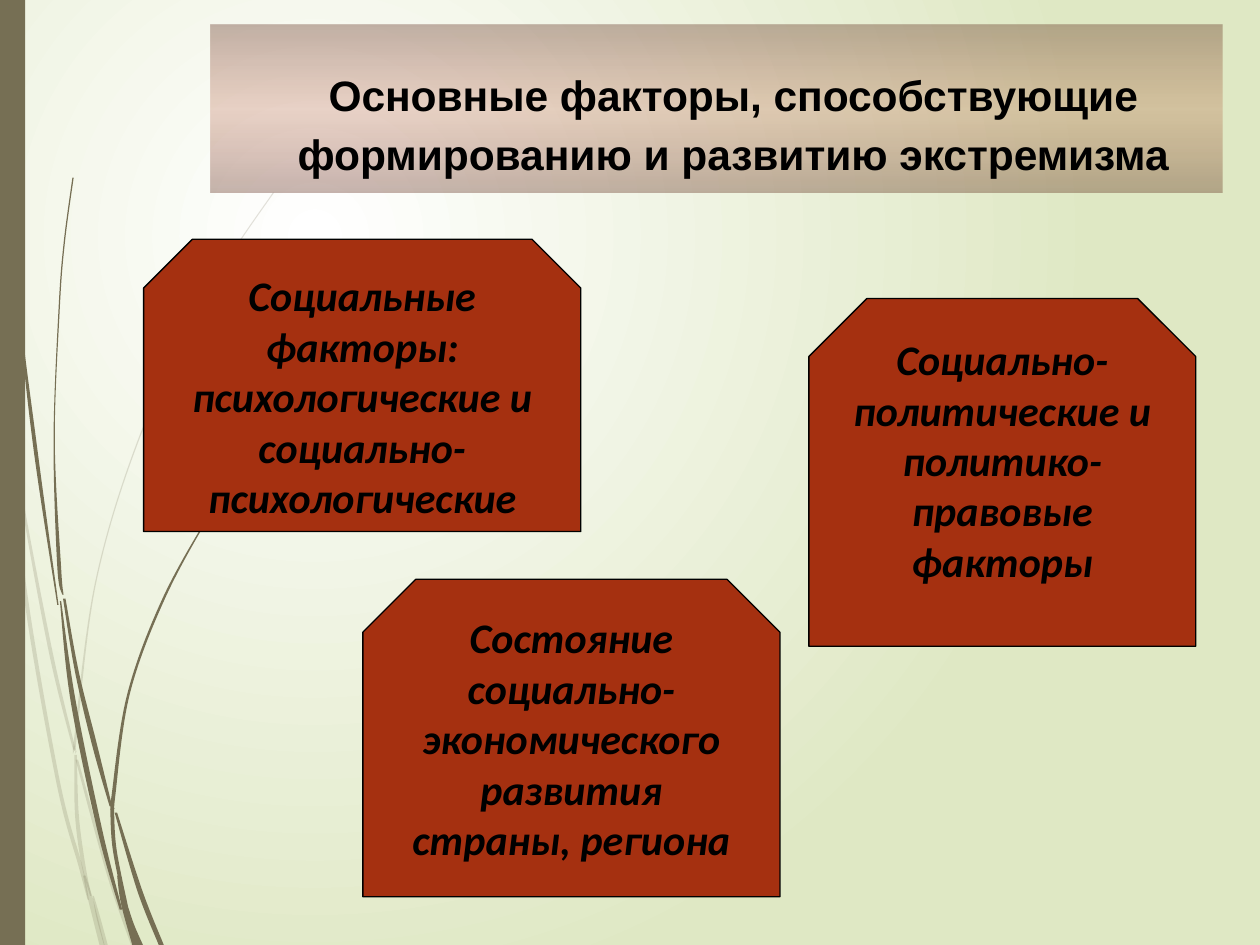
"""Build a slide on the factors behind extremism: a title banner and three factor boxes."""
from dataclasses import dataclass

from lxml.etree import SubElement, fromstring
from pptx import Presentation
from pptx.dml.color import RGBColor
from pptx.enum.shapes import MSO_SHAPE as Shape
from pptx.enum.text import MSO_ANCHOR as Anchor, PP_ALIGN as Align
from pptx.oxml.ns import nsdecls, qn
from pptx.util import Inches, Pt


@dataclass(frozen=True)
class Theme:
    stem: str = "766F54"
    box: str = "A53010"
    box_dark: str = "4F1707"
    ink: str = "000000"
    light: str = "FFFFFF"
    meadow: str = "DFE8C4"
    title_font: str = "Arial"
    body_font: str = "Calibri"
    title_size: float = 24.3
    body_size: float = 24
    outline: float = 0.75
    pale: int = 20
    veil: int = 32


THEME = Theme()
WIDTH, HEIGHT = 10, 7.5

TITLE = "Основные факторы, способствующие формированию и развитию экстремизма"

# Places are left, top, width and height in percent of the slide.
SIDEBAR_PLACE = (0, 0, 2, 100)
BANNER_PLACE = (16.7, 2.6, 80.3, 17.8)
TITLE_PLACE = (20.9, 4.93, 72.1, 15.6)
FACTORS = [
    ("Состояние социально-экономического развития страны, региона", (28.8, 61.3, 33.1, 33.6)),
    ("Социально-политические и политико-правовые факторы", (64.2, 31.6, 30.7, 36.8)),
    ("Социальные факторы:\nпсихологические и социально-психологические", (11.4, 25.33, 34.7, 30.93)),
]

# Each stem is a list of x, y and thickness.
PALE_STEMS = [
    [(0, 2.9, 0.02), (0.04, 3.16, 0.02), (0.08, 3.5, 0.01)],
    [(0.11, 3.5, 0.01), (0.2, 4.11, 0.02), (0.41, 5.21, 0.03), (0.59, 5.95, 0.02)],
    [(0.61, 6.03, 0.02), (0.86, 6.93, 0.03), (1.06, 7.5, 0.04)],
    [(0.09, 3.5, 0.01), (0.2, 4.7, 0.03), (0.46, 6.2, 0.03), (0.64, 6.88, 0.03), (0.7, 7.14, 0.01)],
    [(0.67, 6.95, 0.02), (0.72, 7.14, 0.04), (0.81, 7.5, 0.04)],
    [(2.17, 1.53, 0.01), (1.86, 1.98, 0.01), (1.58, 2.45, 0.01), (1.1, 3.49, 0.01), (0.76, 4.62, 0.01),
     (0.6, 5.85, 0.02), (0.6, 5.96, 0.02)],
    [(0.6, 5.99, 0.02), (0.61, 6.46, 0.03), (0.66, 6.85, 0.03), (0.72, 7.11, 0.01)],
    [(0.74, 7.11, 0.01), (0.78, 7.28, 0.03), (0.84, 7.5, 0.03)],
]
DARK_STEMS = [
    [(0.03, 0, 0.01), (0.06, 1.1, 0.01), (0.14, 2.33, 0.01), (0.28, 3.55, 0.03), (0.46, 4.8, 0.01)],
    [(0.48, 4.77, 0.01), (0.58, 5.56, 0.04), (0.79, 6.58, 0.04), (0.96, 7.22, 0.02)],
    [(0.94, 6.95, 0.02), (0.98, 7.17, 0.04), (1.08, 7.5, 0.06)],
    [(0.58, 1.41, 0.01), (0.51, 1.93, 0.01), (0.47, 2.45, 0.01), (0.43, 3.49, 0.01), (0.47, 4.5, 0.03), (0.5, 4.72, 0.01)],
    [(0.51, 4.75, 0.02), (0.61, 5.33, 0.03), (0.75, 5.91, 0.04), (0.88, 6.4, 0.02)],
    [(0.92, 6.45, 0.02), (1.11, 7.07, 0.04), (1.28, 7.5, 0.04)],
    [(2.15, 3.44, 0.01), (1.91, 3.74, 0.01), (1.68, 4.06, 0.01), (1.3, 4.75, 0.02), (1.02, 5.51, 0.02),
     (0.9, 6.32, 0.03), (0.9, 6.42, 0.03)],
    [(0.89, 6.42, 0.03), (0.91, 6.74, 0.03), (1, 7.19, 0.03)],
    [(1.01, 7.19, 0.01), (1.05, 7.34, 0.03), (1.12, 7.5, 0.03)],
]


def frame(place):
    return [Inches(share * side / 100) for share, side in zip(place, (WIDTH, HEIGHT) * 2)]


def paint(shape, color, alpha=None):
    shape.shadow.inherit = False
    shape.line.fill.background()
    shape.fill.solid()
    shape.fill.fore_color.rgb = RGBColor.from_string(color)
    if alpha:
        node = shape.element.find(".//" + qn("a:srgbClr"))
        SubElement(node, qn("a:alpha"), val=str(alpha * 1000))


def set_gradient(element, stops, direction):
    marks = "".join(
        f'<a:gs pos="{position * 1000}"><a:srgbClr val="{color}">'
        f'<a:alpha val="{alpha * 1000}"/></a:srgbClr></a:gs>'
        for position, color, alpha in stops
    )
    solid = element.find(".//" + qn("a:solidFill"))
    gradient = fromstring(f'<a:gradFill {nsdecls("a")} rotWithShape="1"><a:gsLst>{marks}</a:gsLst>{direction}</a:gradFill>')
    solid.getparent().replace(solid, gradient)


def bend(lines):
    """Turn the straight segments along one side of a stem into curves."""
    points = [(int(node.get("x")), int(node.get("y"))) for line in lines for node in line]
    padded = [points[0], *points, points[-1]]
    for line, before, start, end, after in zip(lines[1:], padded, padded[1:], padded[2:], padded[3:]):
        controls = [
            [a + (c - b) / 6 for a, b, c in zip(start, before, end)],
            [a - (c - b) / 6 for a, b, c in zip(end, start, after)],
            end,
        ]
        nodes = "".join(f'<a:pt x="{round(x)}" y="{round(y)}"/>' for x, y in controls)
        curve = fromstring(f'<a:cubicBezTo {nsdecls("a")}>{nodes}</a:cubicBezTo>')
        line.getparent().replace(line, curve)


def add_stem(slide, points, alpha=None):
    left = [(Inches(x - thickness / 2), Inches(y)) for x, y, thickness in points]
    right = [(Inches(x + thickness / 2), Inches(y)) for x, y, thickness in reversed(points)]
    outline = left + right
    builder = slide.shapes.build_freeform(*outline[0])
    builder.add_line_segments(outline[1:], close=True)
    stem = builder.convert_to_shape()
    lines = list(stem.element.find(".//" + qn("a:pathLst"))[0])
    bend(lines[:len(left)])
    bend(lines[len(left):len(outline)])
    paint(stem, THEME.stem, alpha)


def add_panel(slide, kind, place, color):
    panel = slide.shapes.add_shape(kind, *frame(place))
    paint(panel, color)
    return panel


def write(text_frame, text, font_name, size, italic=False):
    text_frame.text = text
    text_frame.word_wrap = True
    for paragraph in text_frame.paragraphs:
        paragraph.alignment = Align.CENTER
        for run in paragraph.runs:
            font = run.font
            font.name, font.size = font_name, Pt(size)
            font.bold, font.italic = True, italic
            font.color.rgb = RGBColor.from_string(THEME.ink)


def add_title(slide, banner):
    title = slide.shapes.title
    title.left, title.top, title.width, title.height = frame(TITLE_PLACE)
    text_frame = title.text_frame
    write(text_frame, TITLE, THEME.title_font, THEME.title_size)
    text_frame.vertical_anchor = Anchor.MIDDLE
    text_frame.margin_left = text_frame.margin_right = 0
    text_frame.margin_top = text_frame.margin_bottom = 0
    paragraph = text_frame.paragraphs[0]
    paragraph.line_spacing = 1.15
    paragraph._p.get_or_add_pPr().set("marL", str(Inches(0.25)))
    banner.element.addnext(title.element)


def add_factor(slide, text, place):
    box = add_panel(slide, Shape.SNIP_2_SAME_RECTANGLE, place, THEME.box)
    box.line.color.rgb = RGBColor.from_string(THEME.ink)
    box.line.width = Pt(THEME.outline)
    box.text_frame.vertical_anchor = Anchor.TOP
    write(box.text_frame, text, THEME.body_font, THEME.body_size, italic=True)


def main():
    presentation = Presentation()
    presentation.slide_width, presentation.slide_height = Inches(WIDTH), Inches(HEIGHT)
    slide = presentation.slides.add_slide(presentation.slide_layouts[5])

    slide.background.fill.solid()
    set_gradient(
        slide.element,
        [(0, THEME.light, 100), (100, THEME.meadow, 100)],
        '<a:path path="circle"><a:fillToRect l="50000" t="50000" r="100000" b="100000"/></a:path>',
    )
    for stems, alpha in ((PALE_STEMS, THEME.pale), (DARK_STEMS, None)):
        for points in stems:
            add_stem(slide, points, alpha)
    add_panel(slide, Shape.RECTANGLE, SIDEBAR_PLACE, THEME.stem)

    banner = add_panel(slide, Shape.RECTANGLE, BANNER_PLACE, THEME.box)
    set_gradient(
        banner.element,
        [(0, THEME.box_dark, THEME.veil), (50, THEME.box, THEME.pale), (100, THEME.box_dark, THEME.veil)],
        '<a:lin ang="5400000" scaled="0"/>',
    )
    add_title(slide, banner)
    for text, place in FACTORS:
        add_factor(slide, text, place)
    presentation.save("out.pptx")


if __name__ == "__main__":
    main()
